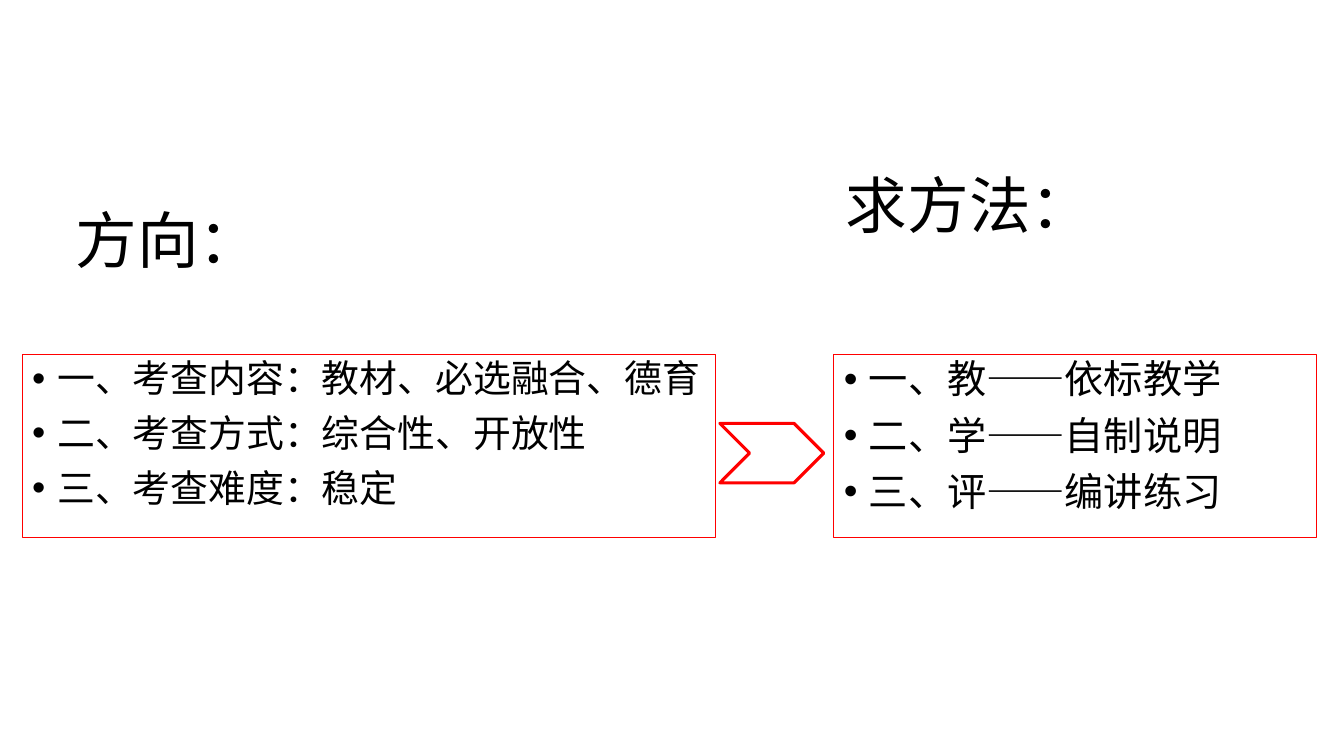
from pptx import Presentation
from pptx import util as u
from pptx.dml.color import RGBColor
from pptx.enum import shapes, text
from pptx.oxml.ns import qn
from lxml import etree

HUES = {"ink": "000000", "edge": "FF0000", "back": "FFFFFF"}
HEAD_TOP, HEAD_TALL = 1.69, 1.45
LIST_TOP, LIST_TALL = 3.52, 1.81
AIMS = ["一、考查内容：教材、必选融合、德育", "二、考查方式：综合性、开放性", "三、考查难度：稳定"]
WAYS = ["一、教——依标教学", "二、学——自制说明", "三、评——编讲练习"]


def hue(name):
    """Return the named colour."""
    return RGBColor.from_string(HUES[name])


def place(shape, box):
    """Move a shape to a box given in inches."""
    shape.left, shape.top, shape.width, shape.height = map(u.Inches, box)


def write(shape, lines, size, anchor):
    """Fill a shape with left-aligned lines of one size."""
    frame = shape.text_frame
    frame.text = "\n".join(lines)
    frame.word_wrap = True
    frame.auto_size = text.MSO_AUTO_SIZE.NONE
    frame.vertical_anchor = anchor
    for para in frame.paragraphs:
        para.alignment = text.PP_ALIGN.LEFT
        para.line_spacing = 0.9
        font = para.runs[0].font
        font.name, font.size = "Calibri", u.Pt(size)
        font.color.rgb = hue("ink")


def outline(slide, kind, box, width):
    """Add a plain shape with a red outline."""
    shape = slide.shapes.add_shape(kind, *map(u.Inches, box))
    shape.shadow.inherit = False
    shape.line.color.rgb = hue("edge")
    shape.line.width = u.Pt(width)
    return shape


def heading(shape, words, box, anchor):
    """Place and write a large heading."""
    place(shape, box)
    write(shape, [words], 44, anchor)


def points(slide, lines, box, size):
    """Add a framed list with bullets."""
    frame = outline(slide, shapes.MSO_SHAPE.RECTANGLE, box, 0.75)
    frame.fill.background()
    write(frame, lines, size, text.MSO_ANCHOR.TOP)
    for para in frame.text_frame.paragraphs:
        para.space_before = u.Pt(10)
        props = para._p.get_or_add_pPr()
        props.set("marL", str(u.Inches(0.25)))
        props.set("indent", str(-u.Inches(0.25)))
        etree.SubElement(props, qn("a:buFont")).set("typeface", "Arial")
        etree.SubElement(props, qn("a:buChar")).set("char", "•")


def arrow(slide, box):
    """Add the chevron between the lists."""
    shape = outline(slide, shapes.MSO_SHAPE.CHEVRON, box, 2.25)
    shape.fill.solid()
    shape.fill.fore_color.rgb = hue("back")


def main():
    """Build and save the slide."""
    deck = Presentation()
    deck.slide_width, deck.slide_height = u.Inches(13.33), u.Inches(7.5)
    slide = deck.slides.add_slide(deck.slide_layouts[5])
    heading(slide.shapes.title, "求方法：", (8.29, HEAD_TOP, 2.99, HEAD_TALL), text.MSO_ANCHOR.TOP)
    points(slide, WAYS, (8.27, LIST_TOP, 4.79, LIST_TALL), 28)
    label = slide.shapes.add_textbox(0, 0, 0, 0)
    heading(label, "方向：", (0.65, HEAD_TOP, 2.26, HEAD_TALL), text.MSO_ANCHOR.MIDDLE)
    points(slide, AIMS, (0.22, LIST_TOP, 6.88, LIST_TALL), 27)
    arrow(slide, (7.14, 4.2, 1.03, 0.59))
    deck.save("out.pptx")


if __name__ == "__main__":
    main()
